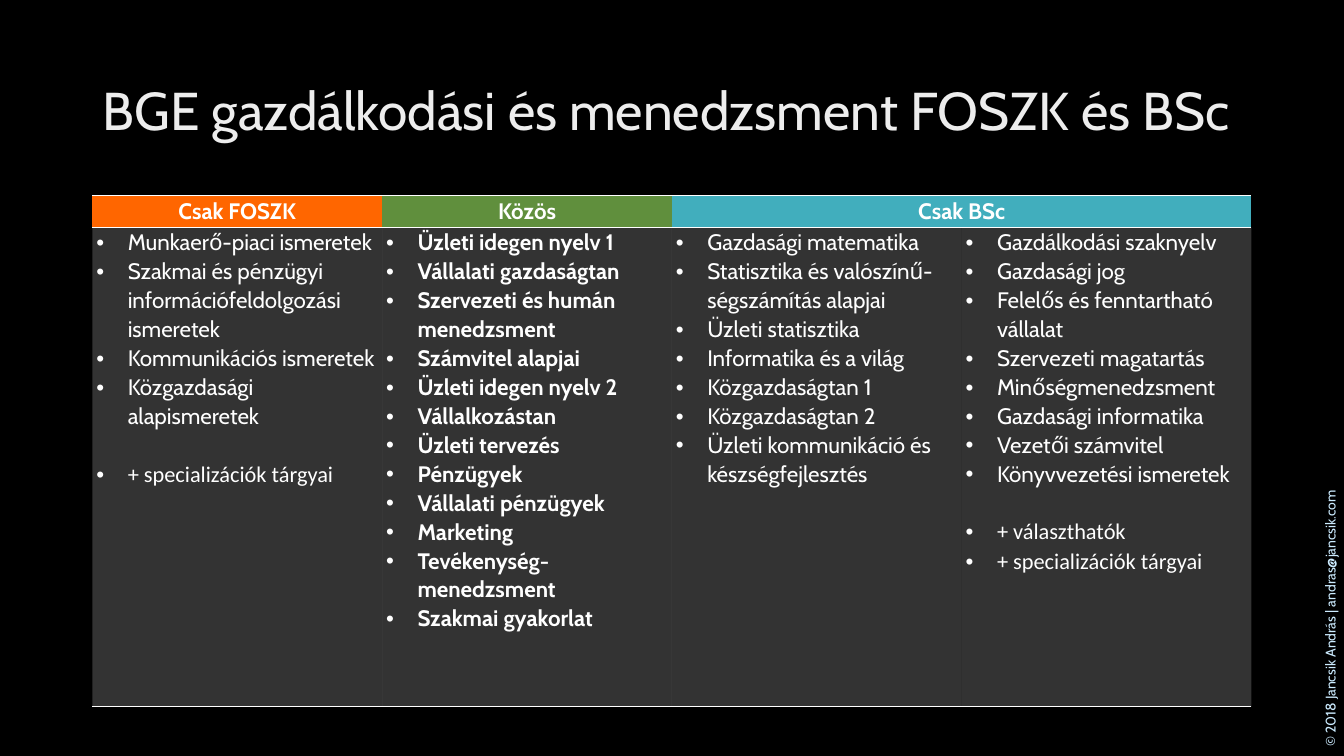
from lxml import etree
from pptx import Presentation
from pptx.dml.color import RGBColor
from pptx.enum.text import MSO_ANCHOR, PP_ALIGN
from pptx.oxml.ns import qn
from pptx.util import Cm, Pt

MIDDLE = MSO_ANCHOR.MIDDLE
LEFT, CENTER = PP_ALIGN.LEFT, PP_ALIGN.CENTER

BLACK = RGBColor(0x00, 0x00, 0x00)
WHITE = RGBColor(0xFF, 0xFF, 0xFF)
ORANGE = RGBColor(0xFF, 0x66, 0x00)
GREEN = RGBColor(0x60, 0x8F, 0x3D)
TEAL = RGBColor(0x41, 0xAE, 0xBD)
PALE_BLUE = RGBColor(0xCC, 0xEC, 0xFF)
TITLE_STOPS = [(0, RGBColor(0xBF, 0xBF, 0xBF)), (28, RGBColor(0xED, 0xED, 0xED)), (100, WHITE)]
NO_STYLE = "{2D5ABB26-0587-4C30-8999-92F81FD0307C}"

HEADERS = [("Csak FOSZK", ORANGE), ("Közös", GREEN), ("Csak BSc", TEAL), ("", TEAL)]
SUBJECTS = [
    ["Munkaerő-piaci ismeretek", "Szakmai és pénzügyi információfeldolgozási ismeretek",
     "Kommunikációs ismeretek", "Közgazdasági alapismeretek", "+ specializációk tárgyai"],
    ["Üzleti idegen nyelv 1", "Vállalati gazdaságtan", "Szervezeti és humán menedzsment",
     "Számvitel alapjai", "Üzleti idegen nyelv 2", "Vállalkozástan", "Üzleti tervezés",
     "Pénzügyek", "Vállalati pénzügyek", "Marketing", "Tevékenység-menedzsment",
     "Szakmai gyakorlat"],
    ["Gazdasági matematika", "Statisztika és valószínű-ségszámítás alapjai",
     "Üzleti statisztika", "Informatika és a világ", "Közgazdaságtan 1",
     "Közgazdaságtan 2", "Üzleti kommunikáció és készségfejlesztés"],
    ["Gazdálkodási szaknyelv", "Gazdasági jog", "Felelős és fenntartható vállalat",
     "Szervezeti magatartás", "Minőségmenedzsment", "Gazdasági informatika",
     "Vezetői számvitel", "Könyvvezetési ismeretek", "+ választhatók",
     "+ specializációk tárgyai"],
]
COMMON = 1


class Deck:
    """Slide builder that holds the style and the current slide."""

    def __init__(self):
        self.prs = Presentation()
        self.prs.slide_width, self.prs.slide_height = Cm(33.87), Cm(19.05)
        self.font, self.extra_font = "Cabin", "Calibri"
        self.s = self.prs.slides.add_slide(self.prs.slide_layouts[5])
        fill = self.s.background.fill
        fill.solid()
        fill.fore_color.rgb = BLACK

    def format(self, p, size, color, bold=False, font=None):
        for r in p.runs:
            r.font.name = font or self.font
            r.font.size = Pt(size)
            r.font.bold = bold
            r.font.color.rgb = color

    def place(self, shape, x, y, w, h):
        shape.left, shape.top, shape.width, shape.height = Cm(x), Cm(y), Cm(w), Cm(h)

    def title(self, text, x, y, w, h):
        sp = self.s.shapes.title
        self.place(sp, x, y, w, h)
        tf = sp.text_frame
        tf.text = text
        tf.vertical_anchor = MIDDLE
        p = tf.paragraphs[0]
        p.alignment = LEFT
        p.line_spacing = 0.9
        self.format(p, 38, WHITE)
        rPr = p.runs[0].font._element
        solid = rPr.find(qn("a:solidFill"))
        grad = etree.Element(qn("a:gradFill"))
        stops = etree.SubElement(grad, qn("a:gsLst"))
        for pos, color in TITLE_STOPS:
            gs = etree.SubElement(stops, qn("a:gs"), pos=str(pos * 1000))
            etree.SubElement(gs, qn("a:srgbClr"), val=str(color))
        etree.SubElement(grad, qn("a:lin"), ang=str(80 * 60000), scaled="0")
        rPr.replace(solid, grad)

    def side_text(self, text, x, y, w, h):
        sp = self.s.shapes.add_textbox(Cm(x), Cm(y), Cm(w), Cm(h))
        sp.rotation = 270
        tf = sp.text_frame
        tf.word_wrap = True
        tf.text = text
        self.format(tf.paragraphs[0], 10, PALE_BLUE)

    def border(self, cell, side):
        ln = etree.Element(qn(f"a:ln{side}"), w=str(Pt(1)))
        fill = etree.SubElement(ln, qn("a:solidFill"))
        etree.SubElement(fill, qn("a:srgbClr"), val=str(WHITE))
        tcPr = cell._tc.get_or_add_tcPr()
        tcPr.insert(len(tcPr.findall(qn("a:lnT"))), ln)

    def cell(self, cell, color, sides, alpha=None):
        cell.margin_left = cell.margin_right = Cm(0.1)
        cell.margin_top = cell.margin_bottom = 0
        cell.fill.solid()
        cell.fill.fore_color.rgb = color
        if alpha:
            clr = cell._tc.tcPr.find(qn("a:solidFill")).find(qn("a:srgbClr"))
            etree.SubElement(clr, qn("a:alpha"), val=str(alpha * 1000))
        for side in sides:
            self.border(cell, side)

    def bullets(self, tf, items, bold):
        tf.text = "\n".join(items)
        extras = [item.startswith("+") for item in items]
        for i, p in enumerate(tf.paragraphs):
            pPr = p._p.get_or_add_pPr()
            pPr.set("marL", str(Cm(0.79)))
            pPr.set("indent", str(-Cm(0.79)))
            etree.SubElement(pPr, qn("a:buFont"), typeface="Arial")
            etree.SubElement(pPr, qn("a:buChar"), char="•")
            p.line_spacing = 1.07
            if extras[i] and not extras[i - 1]:
                p.space_before = Pt(20.7)
            self.format(p, 16, WHITE, bold, self.extra_font if extras[i] else None)

    def table(self, x, y, w, heights):
        frame = self.s.shapes.add_table(2, len(HEADERS), Cm(x), Cm(y), Cm(w), Cm(sum(heights)))
        tb = frame.table
        tb._tbl.tblPr.find(qn("a:tableStyleId")).text = NO_STYLE
        tb.first_row = tb.horz_banding = False
        for row, height in zip(tb.rows, heights):
            row.height = Cm(height)
        for col, ((header, color), subjects) in enumerate(zip(HEADERS, SUBJECTS)):
            tb.columns[col].width = Cm(w / len(HEADERS))
            head, body = tb.cell(0, col), tb.cell(1, col)
            self.cell(head, color, "TB")
            head.text_frame.text = header
            p = head.text_frame.paragraphs[0]
            p.alignment = CENTER
            p.line_spacing = 1.07
            self.format(p, 16, WHITE, True)
            self.cell(body, WHITE, "B", alpha=20)
            self.bullets(body.text_frame, subjects, col == COMMON)
        tb.cell(0, 2).merge(tb.cell(0, 3))


def main():
    deck = Deck()
    deck.side_text("© 2018 Jancsik András | andras@jancsik.com", 24, 9.2, 19.05, 0.69)
    deck.title("BGE gazdálkodási és menedzsment FOSZK és BSc", 2.33, 1.02, 29.21, 3.68)
    deck.table(2.33, 4.93, 29.21, [0.8, 12.08])
    deck.prs.save("out.pptx")


if __name__ == "__main__":
    main()
